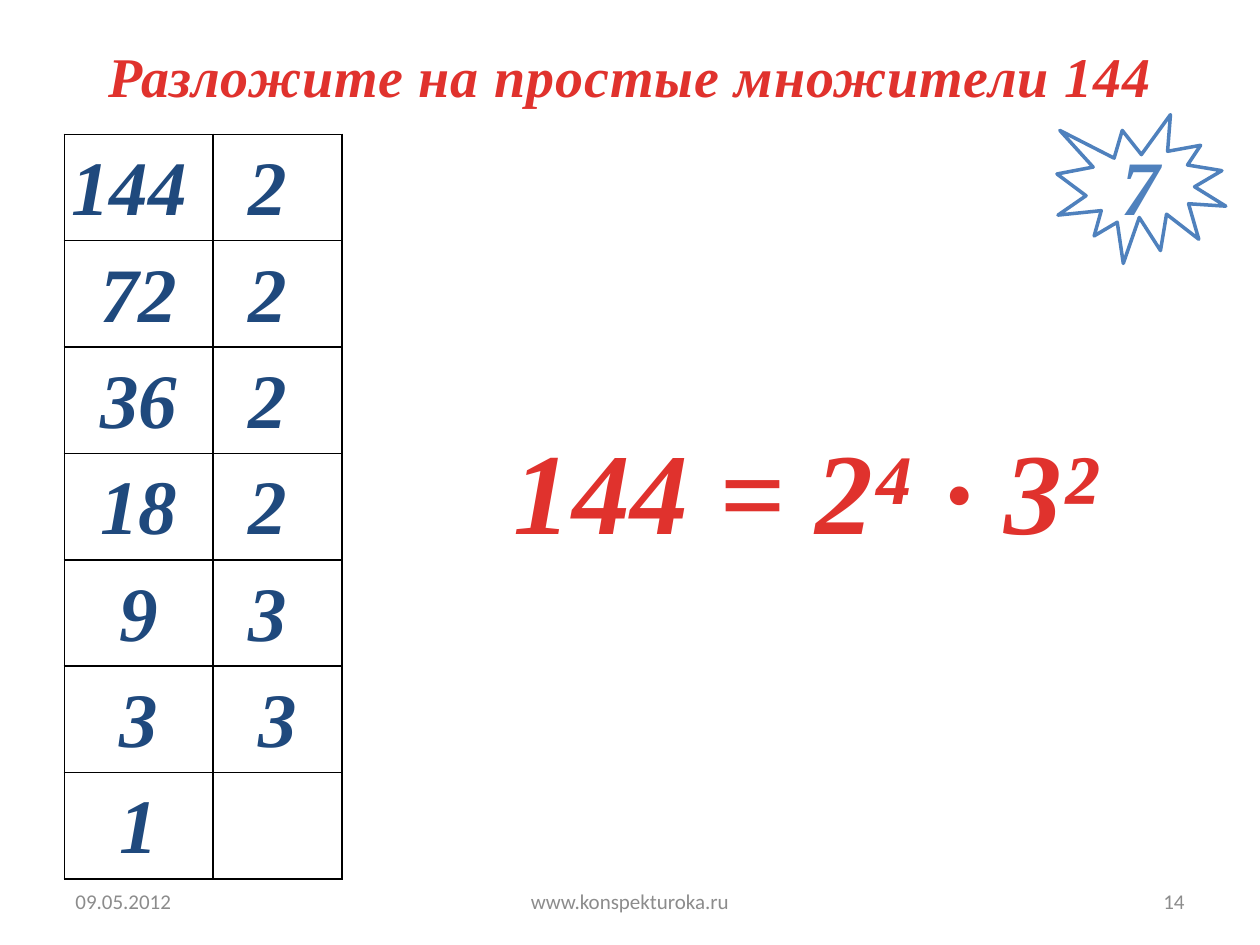
"""Build a slide that factors 144 into primes."""
from lxml.etree import SubElement
from pptx import Presentation
from pptx.dml.color import RGBColor
from pptx.enum.shapes import MSO_SHAPE
from pptx.enum.text import MSO_ANCHOR, PP_ALIGN
from pptx.oxml.ns import qn
from pptx.util import Pt

SERIF = "Times New Roman"
RED, NAVY, BLUE, GREY, BLACK, WHITE = "E0322D", "1F497D", "4F81BD", "8C8C8C", "000000", "FFFFFF"

TITLE = "Разложите на простые множители 144"
FORMULA = "144 = 2⁴ ∙ 3²"
SEAL_NUMBER = "7"
DIVISIONS = [("144 ", "2 "), ("72", "2 "), ("36", "2 "), ("18", "2 "), ("9", "3 "), ("3", "3"), ("1", "")]
FOOTERS = [
    ("09.05.2012", 36, 168, PP_ALIGN.LEFT),
    ("www.konspekturoka.ru", 246, 228, PP_ALIGN.CENTER),
    ("14", 516, 168, PP_ALIGN.RIGHT),
]
TABLE_LEFT, TABLE_TOP, ROW_HEIGHT = 36.8, 76.8, 60.8
COLUMN_WIDTHS = [84.8, 73.8]


def color(value):
    return RGBColor.from_string(value)


def write(frame, text, size, tint, align=PP_ALIGN.CENTER, name=SERIF, bold_italic=True, spacing=0):
    frame.text = text
    para = frame.paragraphs[0]
    para.alignment = align
    for span in para.runs:
        span.font.name = name
        span.font.size = Pt(size)
        span.font.color.rgb = color(tint)
        span.font.bold = span.font.italic = bold_italic
        if spacing:
            span.font._element.set("spc", str(int(spacing * 100)))
    return para


def add_text(slide, left, top, width, height, wrap=True, anchor=MSO_ANCHOR.TOP):
    frame = slide.shapes.add_textbox(Pt(left), Pt(top), Pt(width), Pt(height)).text_frame
    frame.word_wrap = wrap
    frame.vertical_anchor = anchor
    return frame


def draw_borders(cell):
    properties = cell._tc.get_or_add_tcPr()
    for side in ("a:lnL", "a:lnR", "a:lnT", "a:lnB"):
        line = SubElement(properties, qn(side), w=str(Pt(1)))
        fill = SubElement(line, qn("a:solidFill"))
        SubElement(fill, qn("a:srgbClr"), val=BLACK)


def add_divisions(slide):
    rows, columns = len(DIVISIONS), len(COLUMN_WIDTHS)
    table = slide.shapes.add_table(
        rows, columns, Pt(TABLE_LEFT), Pt(TABLE_TOP), Pt(sum(COLUMN_WIDTHS)), Pt(ROW_HEIGHT * rows)
    ).table
    table.first_row = table.horz_banding = False
    for column, width in zip(table.columns, COLUMN_WIDTHS):
        column.width = Pt(width)
    for row, values in zip(table.rows, DIVISIONS):
        row.height = Pt(ROW_HEIGHT)
        for cell, value in zip(row.cells, values):
            cell.margin_left = cell.margin_right = Pt(2)
            cell.margin_top = cell.margin_bottom = 0
            draw_borders(cell)
            cell.fill.background()
            write(cell.text_frame, value, 44, NAVY).line_spacing = 1.15


def add_seal(slide):
    seal = slide.shapes.add_shape(MSO_SHAPE.EXPLOSION1, Pt(604), Pt(65.5), Pt(96.5), Pt(85))
    seal.shadow.inherit = False
    seal.fill.solid()
    seal.fill.fore_color.rgb = color(WHITE)
    seal.line.color.rgb = color(BLUE)
    seal.line.width = Pt(2)
    seal.text_frame.vertical_anchor = MSO_ANCHOR.MIDDLE
    write(seal.text_frame, SEAL_NUMBER, 44, BLUE)


def main():
    deck = Presentation()
    deck.slide_width, deck.slide_height = Pt(720), Pt(540)
    slide = deck.slides.add_slide(deck.slide_layouts[6])
    for text, left, width, align in FOOTERS:
        frame = add_text(slide, left, 500.5, width, 28.75, anchor=MSO_ANCHOR.MIDDLE)
        write(frame, text, 12, GREY, align, "Calibri", False)
    write(add_text(slide, 54, 20, 612, 46), TITLE, 32, RED, spacing=0.5)
    formula = add_text(slide, 286.5, 236, 356, 87, wrap=False)
    write(formula, FORMULA, 66, RED, PP_ALIGN.LEFT, spacing=0.5)
    add_divisions(slide)
    add_seal(slide)
    deck.save("out.pptx")


if __name__ == "__main__":
    main()
